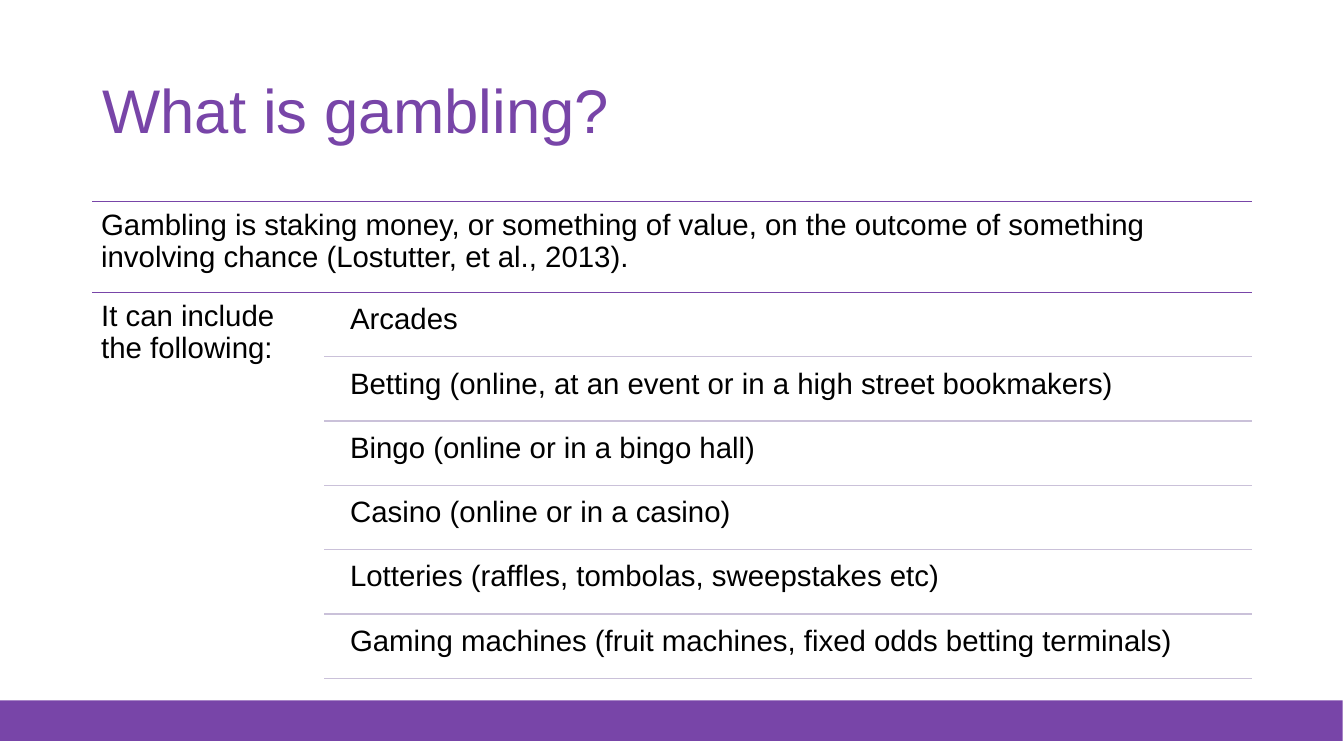
import pptx
import pptx.dml.color
import pptx.enum.shapes
import pptx.enum.text
import pptx.oxml.xmlchemy
import pptx.util
from pptx.util import Cm

PURPLE = "7845A8"
LILAC = "CAC1D9"
BLACK = "000000"

DEFINITION = (
    "Gambling is staking money, or something of value, on the outcome of "
    "something involving chance (Lostutter, et al., 2013)."
)
LEAD_IN = "It can include the following:"
KINDS = [
    "Arcades",
    "Betting (online, at an event or in a high street bookmakers)",
    "Bingo (online or in a bingo hall)",
    "Casino (online or in a casino)",
    "Lotteries (raffles, tombolas, sweepstakes etc)",
    "Gaming machines (fruit machines, fixed odds betting terminals)",
]


def rgb(value):
    return pptx.dml.color.RGBColor.from_string(value)


def style_paragraph(p, size, color):
    p.alignment = pptx.enum.text.PP_ALIGN.LEFT
    p.line_spacing = 0.9
    p.font.name = "Arial"
    p.font.size = pptx.util.Pt(size)
    p.font.color.rgb = rgb(color)


def add_text(s, text, x, y, w, h):
    tf = s.shapes.add_textbox(Cm(x), Cm(y), Cm(w), Cm(h)).text_frame
    tf.word_wrap = True
    tf.margin_left = tf.margin_right = Cm(0.22)
    tf.margin_top = tf.margin_bottom = Cm(0.22)
    p = tf.paragraphs[0]
    p.text = text
    style_paragraph(p, 21, BLACK)


def add_rule(s, x, y, w, color):
    line = s.shapes.add_connector(
        pptx.enum.shapes.MSO_CONNECTOR.STRAIGHT, Cm(x), Cm(y), Cm(x + w), Cm(y)
    )
    line.line.color.rgb = rgb(color)
    line.line.width = pptx.util.Pt(1)
    line._element.spPr.append(pptx.oxml.xmlchemy.OxmlElement("a:effectLst"))


def add_footer_bar(s, x, y, w, h):
    bar = s.shapes.add_shape(
        pptx.enum.shapes.MSO_SHAPE.RECTANGLE, Cm(x), Cm(y), Cm(w), Cm(h)
    )
    bar.shadow.inherit = False
    bar.fill.solid()
    bar.fill.fore_color.rgb = rgb(PURPLE)
    bar.line.fill.background()


def add_title(s, x, y, w, h):
    title = s.shapes.title
    title.left, title.top, title.width, title.height = Cm(x), Cm(y), Cm(w), Cm(h)
    tf = title.text_frame
    tf.vertical_anchor = pptx.enum.text.MSO_ANCHOR.MIDDLE
    p = tf.paragraphs[0]
    p.text = "What is gambling?"
    style_paragraph(p, 44, PURPLE)


def add_definition(s, x, y, w, h):
    add_rule(s, x, y, w, PURPLE)
    add_text(s, DEFINITION, x, y, w, h)


def add_kinds(s, x, y, w, h):
    label_w = w / 5
    indent, gap = 0.43, 0.08
    row_h = h / len(KINDS)
    add_rule(s, x, y, w, PURPLE)
    add_text(s, LEAD_IN, x, y, label_w, h)
    for i, kind in enumerate(KINDS):
        top = y + i * row_h
        add_text(
            s, kind, x + label_w + indent, top + gap,
            w - label_w - indent, row_h - gap,
        )
        add_rule(s, x + label_w, top + row_h, w - label_w, LILAC)


def main():
    prs = pptx.Presentation()
    prs.slide_width, prs.slide_height = Cm(33.87), Cm(19.05)
    s = prs.slides.add_slide(prs.slide_layouts[5])
    add_footer_bar(s, -0.03, 17.65, 33.87, 1.02)
    add_title(s, 2.33, 1.02, 22.68, 3.68)
    add_definition(s, 2.33, 5.08, 29.21, 2.29)
    add_kinds(s, 2.33, 7.37, 29.21, 9.72)
    prs.save("out.pptx")


if __name__ == "__main__":
    main()
